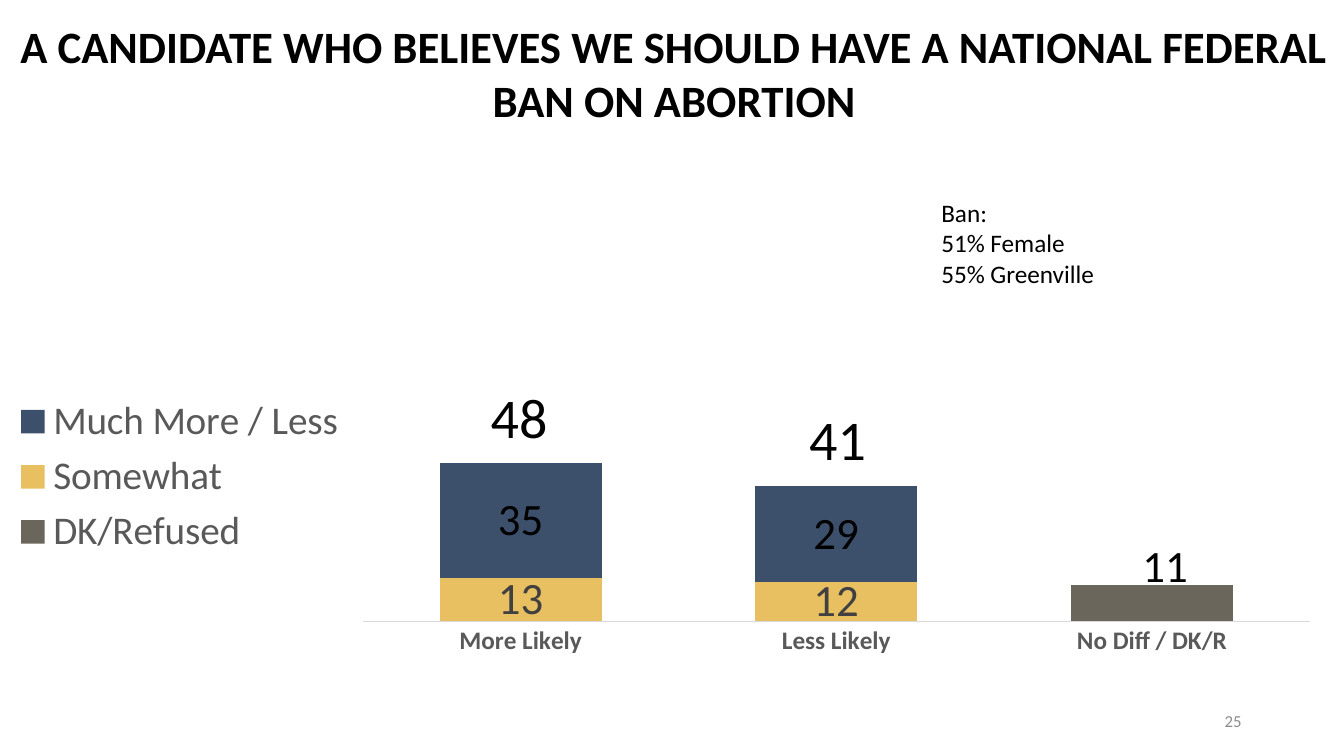
from lxml import etree
from pptx import Presentation
from pptx import util as u
from pptx.chart.data import CategoryChartData
from pptx.dml.color import RGBColor
from pptx.enum import chart as ch, text
from pptx.oxml.ns import qn

Pt = u.Pt


def style(font, size, color, bold=False):
    font.name, font.size, font.bold = "Calibri", Pt(size), bold
    font.color.rgb = RGBColor.from_string(color)


def layout(**values):
    el = etree.Element(qn("c:layout"))
    manual = etree.SubElement(el, qn("c:manualLayout"))
    for tag, val in values.items():
        etree.SubElement(manual, qn("c:" + tag)).set("val", str(val))
    return el


prs = Presentation()
prs.slide_width, prs.slide_height = Pt(960), Pt(540)
s = prs.slides.add_slide(prs.slide_layouts[6])

data = CategoryChartData()
data.categories = ["More Likely", "Less Likely", "No Diff / DK/R"]
series = [
    ("DK/Refused", (None, None, 11), "6B665B", "000000"),
    ("Somewhat", (13, 12, None), "E8C062", "404040"),
    ("Much More / Less", (35, 29, None), "3C4F6B", "000000"),
]
for name, values, fill, color in series:
    data.add_series(name, values)

chart = s.shapes.add_chart(ch.XL_CHART_TYPE.COLUMN_STACKED, Pt(0), Pt(197.3),
                           Pt(946), Pt(286.6), data).chart
style(chart.font, 10, "000000")
chart.has_title = False
chart.has_legend = True
chart.legend.position = ch.XL_LEGEND_POSITION.LEFT
chart.legend.include_in_layout = False
style(chart.legend.font, 28, "595959")

cat = chart.category_axis
cat.major_tick_mark = ch.XL_TICK_MARK.NONE
cat.format.line.color.rgb = RGBColor.from_string("D9D9D9")
cat.format.line.width = Pt(0.75)
style(cat.tick_labels.font, 18, "595959", True)
val = chart.value_axis
val.minimum_scale, val.maximum_scale = 0, 100
val.has_major_gridlines = False
val.visible = False

plot = chart.plots[0]
plot.gap_width, plot.overlap = 95, 100
for ser, (name, values, fill, color) in zip(plot.series, series):
    ser.format.fill.solid()
    ser.format.fill.fore_color.rgb = RGBColor.from_string(fill)
    ser.data_labels.show_value = True
    style(ser.data_labels.font, 32, color)

style(plot.series[0].points[2].data_label.font, 32, "000000")
label = plot.series[0].data_labels._element.find(qn("c:dLbl"))
label.find(qn("c:idx")).addnext(layout(x=0.01, y=-0.09))

area = chart._chartSpace.chart.plotArea
for old in area.findall(qn("c:layout")):
    area.remove(old)
area.insert(0, layout(layoutTarget="inner", xMode="edge", yMode="edge",
                      x=0.274, y=0.038, w=0.715, h=0.822))

left, center, right = text.PP_ALIGN.LEFT, text.PP_ALIGN.CENTER, text.PP_ALIGN.RIGHT
top, middle = text.MSO_ANCHOR.TOP, text.MSO_ANCHOR.MIDDLE
boxes = [
    (3, 10, 957, 143, ["A CANDIDATE WHO BELIEVES WE SHOULD HAVE A NATIONAL FEDERAL BAN ON ABORTION"],
     32, "000000", True, center, top),
    (678, 500.5, 216, 28.8, ["25"], 12, "8C8C8C", False, right, middle),
    (341.3, 270, 59, 55.4, ["48"], 40, "000000", False, center, top),
    (568.8, 285.1, 59, 55.4, ["41"], 40, "000000", False, center, top),
    (665.3, 137.5, 208, 72.7, ["Ban:", "51% Female", "55% Greenville"],
     18, "000000", False, left, top),
]
for x, y, w, h, lines, size, color, bold, align, anchor in boxes:
    tf = s.shapes.add_textbox(Pt(x), Pt(y), Pt(w), Pt(h)).text_frame
    tf.word_wrap = True
    tf.vertical_anchor = anchor
    tf.text = "\n".join(lines)
    for p in tf.paragraphs:
        p.alignment = align
        style(p.font, size, color, bold)

prs.save("out.pptx")
